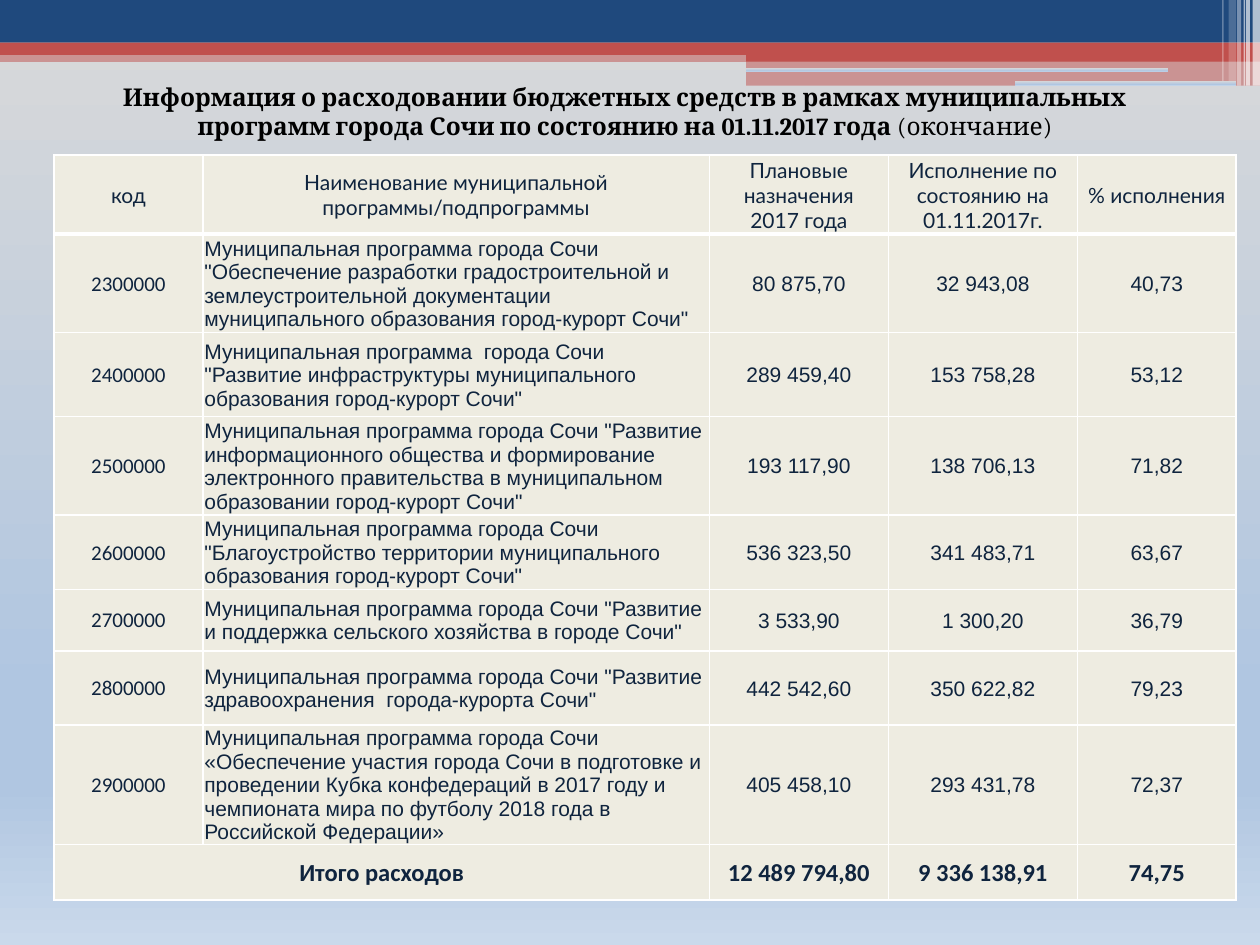
from lxml import etree
from pptx import Presentation
from pptx.dml.color import RGBColor
from pptx.enum.shapes import MSO_SHAPE
from pptx.enum.text import MSO_ANCHOR, PP_ALIGN
from pptx.oxml.ns import qn
from pptx.util import Cm, Pt

NAVY = RGBColor(0x1F, 0x49, 0x7D)
RED = RGBColor(0xC0, 0x50, 0x4D)
WHITE = RGBColor(0xFF, 0xFF, 0xFF)
BLACK = RGBColor(0x00, 0x00, 0x00)
CREAM = RGBColor(0xEE, 0xEC, 0xE1)
INK = RGBColor(0x0F, 0x24, 0x3E)
SKY = [(0, RGBColor(0xD9, 0xD9, 0xD9)), (74, RGBColor(0xB0, 0xC6, 0xE1)),
       (83, RGBColor(0xB0, 0xC6, 0xE1)), (100, RGBColor(0xCA, 0xD9, 0xEB))]

COLUMN_WIDTHS = [3, 10.21, 3.61, 3.81, 3.2]
ROW_HEIGHTS = [1.6, 1.98, 1.7, 1.98, 1.5, 1.24, 1.5, 2.4, 1.12]
HEADINGS = ["код", "Наименование муниципальной программы/подпрограммы",
            "Плановые\vназначения\v2017 года",
            "Исполнение по состоянию на 01.11.2017г.", "% исполнения"]
PROGRAMS = [
    ["2300000", 'Муниципальная программа города Сочи "Обеспечение разработки '
     'градостроительной и землеустроительной документации муниципального '
     'образования город-курорт Сочи"', "80 875,70", "32 943,08", "40,73"],
    ["2400000", 'Муниципальная программа  города Сочи "Развитие инфраструктуры '
     'муниципального образования город-курорт Сочи"',
     "289 459,40", "153 758,28", "53,12"],
    ["2500000", 'Муниципальная программа города Сочи "Развитие информационного '
     'общества и формирование электронного правительства в муниципальном '
     'образовании город-курорт Сочи"', "193 117,90", "138 706,13", "71,82"],
    ["2600000", 'Муниципальная программа города Сочи "Благоустройство '
     'территории муниципального образования город-курорт Сочи"',
     "536 323,50", "341 483,71", "63,67"],
    ["2700000", 'Муниципальная программа города Сочи "Развитие и поддержка '
     'сельского хозяйства в городе Сочи"', "3 533,90", "1 300,20", "36,79"],
    ["2800000", 'Муниципальная программа города Сочи "Развитие '
     'здравоохранения  города-курорта Сочи"',
     "442 542,60", "350 622,82", "79,23"],
    ["2900000", "Муниципальная программа города Сочи «Обеспечение участия "
     "города Сочи в подготовке и проведении Кубка конфедераций в 2017 году и "
     "чемпионата мира по футболу 2018 года в Российской Федерации»",
     "405 458,10", "293 431,78", "72,37"],
]
TOTALS = ["Итого расходов", "", "12 489 794,80", "9 336 138,91", "74,75"]


def fill_sky(fill, element):
    """Vertical gradient with the four sky stops."""
    fill.gradient()
    fill.gradient_angle = 270
    stops = element.find(".//" + qn("a:gsLst"))
    for stop in list(stops):
        stops.remove(stop)
    for percent, color in SKY:
        stop = etree.SubElement(stops, qn("a:gs"), pos=str(percent * 1000))
        etree.SubElement(stop, qn("a:srgbClr"), val=str(color))


def add_bar(slide, left, top, width, height, color=None, opacity=100):
    """Plain bar; without a colour it is rounded and takes the sky gradient."""
    preset = MSO_SHAPE.RECTANGLE if color else MSO_SHAPE.ROUNDED_RECTANGLE
    bar = slide.shapes.add_shape(preset, Cm(left), Cm(top), Cm(width), Cm(height))
    bar.shadow.inherit = False
    bar.line.fill.background()
    if color is None:
        fill_sky(bar.fill, bar._element)
        return
    bar.fill.solid()
    bar.fill.fore_color.rgb = color
    if opacity < 100:
        tint = bar._element.spPr.find(".//" + qn("a:srgbClr"))
        etree.SubElement(tint, qn("a:alpha"), val=str(opacity * 1000))


def add_header_band(slide, left, top, width):
    # Full-width stripes
    add_bar(slide, left, top + 1.02, width, 0.23, RED, 50)
    add_bar(slide, left, top, width, 0.86, NAVY)
    add_bar(slide, left, top + 0.86, width, 0.25, RED)
    # Right-hand step with two slits
    step = left + width - 10.36
    add_bar(slide, step, top + 0.99, 10.36, 0.25, RED)
    add_bar(slide, step, top + 1.22, 10.36, 0.51, RED, 50)
    add_bar(slide, step, top + 1.37, 8.5, 0.08)
    add_bar(slide, step + 5.43, top + 1.63, 4.45, 0.1)
    # White slivers, measured from the right edge
    for offset, sliver, height, opacity in [
            (0.15, 0.15, 1.73, 65), (0.28, 0.08, 1.73, 65),
            (0.33, 0.03, 1.73, 60), (0.46, 0.08, 1.73, 40),
            (0.63, 0.15, 1.63, 20), (0.76, 0.03, 1.63, 30)]:
        add_bar(slide, left + width - offset, top, sliver, height, WHITE, opacity)


def add_title(slide, left, top, width, height):
    frame = slide.shapes.add_textbox(
        Cm(left), Cm(top), Cm(width), Cm(height)).text_frame
    frame.word_wrap = True
    paragraph = frame.paragraphs[0]
    paragraph.alignment = PP_ALIGN.CENTER
    for wording, bold in [
            ("Информация о расходовании бюджетных средств в рамках "
             "муниципальных программ города Сочи по состоянию на "
             "01.11.2017 года ", True), ("(окончание)", False)]:
        run = paragraph.add_run()
        run.text = wording
        style_font(run.font, "Cambria", 14, bold, BLACK)


def style_font(font, name, size, bold, color):
    font.name, font.size, font.bold = name, Pt(size), bold
    font.color.rgb = color


def style_cell(cell, font_name, size, bold, align, bottom_line):
    cell.vertical_anchor = MSO_ANCHOR.MIDDLE
    cell.margin_left = cell.margin_right = cell.margin_top = Cm(0.03)
    cell.margin_bottom = 0
    # Borders come before the fill in the cell properties
    properties = cell._tc.get_or_add_tcPr()
    for side, weight in [("L", 1), ("R", 1), ("T", 1), ("B", bottom_line)]:
        line = etree.SubElement(properties, qn("a:ln" + side), w=str(Pt(weight)))
        solid = etree.SubElement(line, qn("a:solidFill"))
        etree.SubElement(solid, qn("a:srgbClr"), val=str(WHITE))
    cell.fill.solid()
    cell.fill.fore_color.rgb = CREAM
    paragraph = cell.text_frame.paragraphs[0]
    paragraph.alignment = align
    for run in paragraph.runs:
        style_font(run.font, font_name, size, bold, INK)


def add_spending_table(slide, left, top):
    rows = [HEADINGS, *PROGRAMS, TOTALS]
    table = slide.shapes.add_table(
        len(rows), len(HEADINGS), Cm(left), Cm(top),
        Cm(sum(COLUMN_WIDTHS)), Cm(sum(ROW_HEIGHTS))).table
    table.first_row = table.horz_banding = False
    for column, width in zip(table.columns, COLUMN_WIDTHS):
        column.width = Cm(width)
    last = len(rows) - 1
    for r, (row, height) in enumerate(zip(rows, ROW_HEIGHTS)):
        table.rows[r].height = Cm(height)
        for c, wording in enumerate(row):
            cell = table.cell(r, c)
            cell.text_frame.text = wording
            align = PP_ALIGN.LEFT if c == 1 and 0 < r < last else PP_ALIGN.CENTER
            if r == 0:
                style_cell(cell, "Lato", 12, False, align, 3)
            elif r == last:
                style_cell(cell, "Calibri", 14, True, align, 1)
            else:
                style_cell(cell, "Arial" if c else "Calibri", 12, False, align, 1)
    table.cell(last, 0).merge(table.cell(last, 1))


def main():
    deck = Presentation()
    deck.slide_width, deck.slide_height = Cm(25.4), Cm(19.05)
    slide = deck.slides.add_slide(deck.slide_layouts[6])
    fill_sky(slide.background.fill, slide._element)
    add_header_band(slide, 0, 0, 25.4)
    add_spending_table(slide, 1.09, 3.12)
    add_title(slide, 1.3, 1.52, 22.6, 1.45)
    deck.save("out.pptx")


if __name__ == "__main__":
    main()
